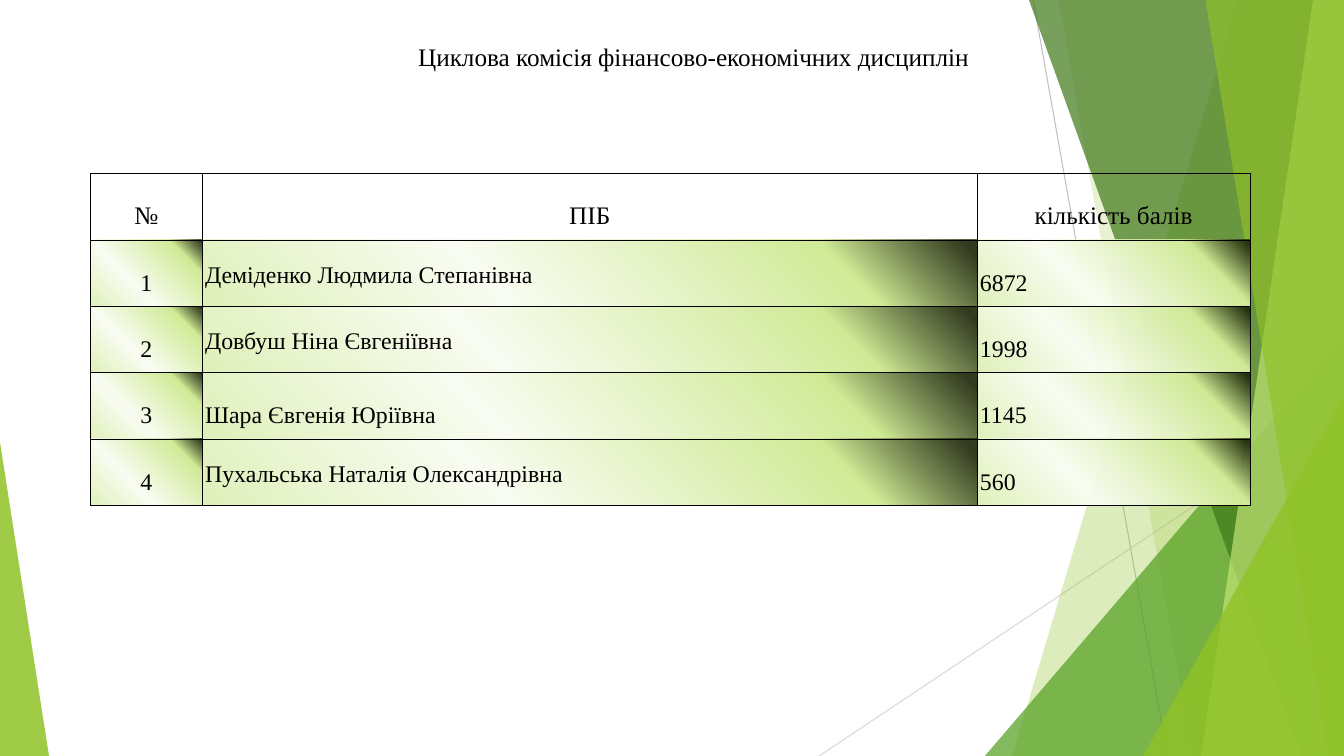
from pptx import Presentation
from pptx.dml.color import RGBColor
from pptx.enum.shapes import MSO_CONNECTOR, MSO_SHAPE
from pptx.enum.text import MSO_ANCHOR, PP_ALIGN
from pptx.oxml import parse_xml
from pptx.oxml.ns import nsdecls
from pptx.oxml.xmlchemy import OxmlElement
from pptx.util import Pt

FONT = "Times New Roman"
WIDTH, HEIGHT = 960, 540
COLORS = {
    "text": "000000",
    "border": "000000",
    "line_dark": "BFBFBF",
    "line_light": "D9D9D9",
    "lime": "90C226",
    "green": "54A021",
    "forest": "3F7819",
    "pale": "C0E474",
    "shade": "1D2708",
    "leaf": "D0EB96",
    "glow": "FAFDF3",
    "mist": "DFF1B9",
}
GRADIENT = [(2, "shade", 90), (19, "leaf", 100), (63, "glow", 100), (100, "mist", 100)]
HEADERS = ["№", "ПІБ", "кількість балів"]
TEACHERS = [
    ("Деміденко Людмила Степанівна", 6872),
    ("Довбуш Ніна Євгеніївна", 1998),
    ("Шара Євгенія Юріївна", 1145),
    ("Пухальська Наталія Олександрівна", 560),
]
BOTTOM_ALIGNED = "Шара Євгенія Юріївна"


def rgb(name):
    return RGBColor.from_string(COLORS[name])


def add_line(slide, start, end, color):
    line = slide.shapes.add_connector(
        MSO_CONNECTOR.STRAIGHT, *(Pt(v) for v in start + end))
    line.line.color.rgb = rgb(color)
    line.line.width = Pt(0.75)
    line._element.spPr.append(OxmlElement("a:effectLst"))


def paint(sp, color, opacity):
    sp.shadow.inherit = False
    sp.line.fill.background()
    sp.fill.solid()
    sp.fill.fore_color.rgb = rgb(color)
    clr = sp._element.spPr.find(".//{*}srgbClr")
    alpha = OxmlElement("a:alpha")
    alpha.set("val", str(opacity * 1000))
    clr.append(alpha)


def add_facet(slide, top_x, bottom_x, color, opacity):
    builder = slide.shapes.build_freeform(Pt(top_x), 0)
    builder.add_line_segments(
        [(Pt(x), Pt(y)) for x, y in
         [(WIDTH, 0), (WIDTH, HEIGHT), (bottom_x, HEIGHT)]])
    paint(builder.convert_to_shape(), color, opacity)


def add_triangle(slide, left, top, width, apex, color, opacity):
    sp = slide.shapes.add_shape(
        MSO_SHAPE.ISOSCELES_TRIANGLE, Pt(left), Pt(top), Pt(width), Pt(HEIGHT - top))
    sp.adjustments[0] = apex
    paint(sp, color, opacity)


def add_backdrop(slide):
    add_line(slide, (738, 0), (834, HEIGHT), "line_dark")
    add_line(slide, (WIDTH, 290), (585, HEIGHT), "line_light")
    add_facet(slide, 884, 723, "lime", 30)
    add_facet(slide, 756, 852, "lime", 20)
    add_triangle(slide, 703.5, 240, 256.5, 1, "green", 72)
    add_facet(slide, 735, 929.5, "forest", 70)
    add_facet(slide, 938, 858, "pale", 70)
    add_facet(slide, 861, 949, "lime", 65)
    add_triangle(slide, 816.5, 283, 143.5, 1, "lime", 80)
    add_triangle(slide, 0, 316, 35, 0, "lime", 85)


def format_paragraph(p, size, align):
    p.alignment = align
    for r in p.runs:
        r.font.size = Pt(size)
        r.font.name = FONT
        r.font.bold = False
        r.font.color.rgb = rgb("text")


def set_title(slide, text):
    sp = slide.shapes.title
    sp.left, sp.top, sp.width, sp.height = Pt(222.5), Pt(25.5), Pt(546), Pt(29)
    tf = sp.text_frame
    tf.text = text
    tf.vertical_anchor = MSO_ANCHOR.MIDDLE
    format_paragraph(tf.paragraphs[0], 18, PP_ALIGN.CENTER)


def add_borders(cell):
    tcPr = cell._tc.get_or_add_tcPr()
    for side in ("lnL", "lnR", "lnT", "lnB"):
        tcPr.append(parse_xml(
            f'<a:{side} {nsdecls("a")} w="{Pt(0.68)}"><a:solidFill>'
            f'<a:srgbClr val="{COLORS["border"]}"/></a:solidFill></a:{side}>'))


def add_gradient(cell):
    stops = "".join(
        f'<a:gs pos="{pos * 1000}"><a:srgbClr val="{COLORS[color]}">'
        f'<a:alpha val="{opacity * 1000}"/></a:srgbClr></a:gs>'
        for pos, color, opacity in GRADIENT)
    cell._tc.get_or_add_tcPr().append(parse_xml(
        f'<a:gradFill {nsdecls("a")} rotWithShape="1"><a:gsLst>{stops}</a:gsLst>'
        f'<a:lin ang="{135 * 60000}" scaled="0"/></a:gradFill>'))


def fill_cell(cell, text, size, align, anchor):
    cell.margin_left = cell.margin_right = Pt(2)
    cell.margin_top = cell.margin_bottom = Pt(7.2)
    cell.vertical_anchor = anchor
    cell.text_frame.text = text
    p = cell.text_frame.paragraphs[0]
    p.line_spacing = 1.15
    format_paragraph(p, size, align)
    add_borders(cell)


def add_score_table(slide):
    rows = [HEADERS] + [
        (str(i), name, str(score)) for i, (name, score) in enumerate(TEACHERS, 1)]
    widths = [80, 553.5, 195]
    row_height = 47.4
    table = slide.shapes.add_table(
        len(rows), len(widths), Pt(64.5), Pt(124), Pt(sum(widths)),
        Pt(row_height * len(rows))).table
    table.first_row = table.horz_banding = False
    for column, width in zip(table.columns, widths):
        column.width = Pt(width)
    for i, row in enumerate(rows):
        table.rows[i].height = Pt(row_height)
        for j, text in enumerate(row):
            cell = table.cell(i, j)
            header = i == 0
            centered = header or j == 0
            middle = not header and j == 1 and text != BOTTOM_ALIGNED
            fill_cell(cell, text, 18 if header else 17,
                      PP_ALIGN.CENTER if centered else PP_ALIGN.LEFT,
                      MSO_ANCHOR.MIDDLE if middle else MSO_ANCHOR.BOTTOM)
            if header:
                cell.fill.background()
            else:
                add_gradient(cell)


def main():
    prs = Presentation()
    prs.slide_width, prs.slide_height = Pt(WIDTH), Pt(HEIGHT)
    slide = prs.slides.add_slide(prs.slide_layouts[5])
    add_backdrop(slide)
    set_title(slide, "Циклова комісія фінансово-економічних дисциплін")
    add_score_table(slide)
    prs.save("out.pptx")


if __name__ == "__main__":
    main()
